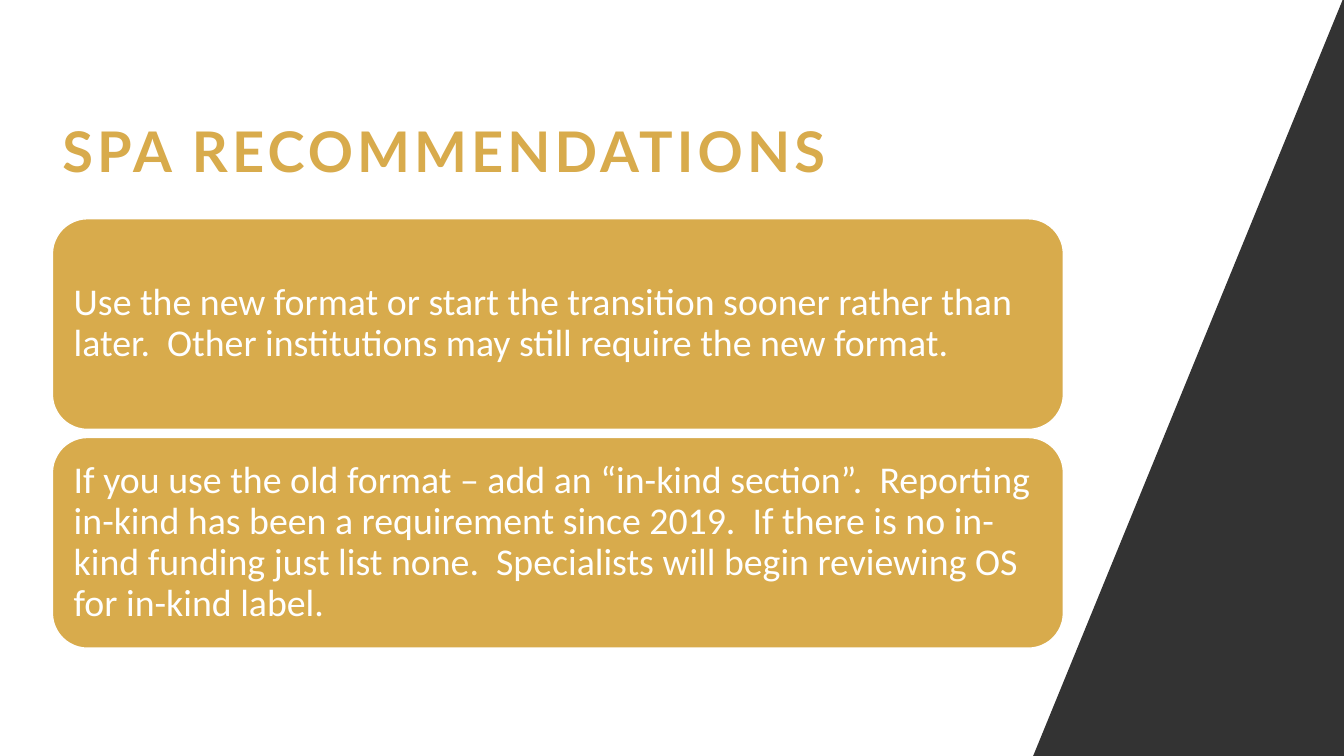
import dataclasses

import pptx
import pptx.dml.color
import pptx.enum.shapes
import pptx.enum.text
import pptx.shapes.autoshape
import pptx.slide
import pptx.util

Inches = pptx.util.Inches
Pt = pptx.util.Pt
Anchor = pptx.enum.text.MSO_ANCHOR

GOLD = "D8AB4C"
WHITE = "FFFFFF"
CHARCOAL = "333333"

SLIDE_HEIGHT = 7.5
SLIDE_WIDTH = SLIDE_HEIGHT * 16 / 9
LEFT, CONTENT_WIDTH = 0.52, 10.03
CARD_TOP, CARD_HEIGHT, CARD_GAP = 2.17, 2.09, 0.08


@dataclasses.dataclass
class Card:
    text: str
    top: float


RECOMMENDATIONS = [
    "Use the new format or start the transition sooner rather than later.  "
    "Other institutions may still require the new format.",
    "If you use the old format – add an “in-kind section”.  Reporting in-kind "
    "has been a requirement since 2019.  If there is no in-kind funding just "
    "list none.  Specialists will begin reviewing OS for in-kind label.",
]


def color(value: str) -> pptx.dml.color.RGBColor:
    return pptx.dml.color.RGBColor.from_string(value)


def write_text(
    shape: pptx.shapes.autoshape.Shape,
    text: str,
    *,
    font: str,
    size: float,
    fill: str,
    anchor: Anchor,
    bold: bool = False,
    margin_x: float = 0.1,
    margin_y: float = 0.05,
    tracking: float = 0,
) -> None:
    """Fill the shape with one left-aligned paragraph; tracking is in points."""
    frame = shape.text_frame
    frame.word_wrap = True
    frame.vertical_anchor = anchor
    frame.margin_left = frame.margin_right = Inches(margin_x)
    frame.margin_top = frame.margin_bottom = Inches(margin_y)
    paragraph = frame.paragraphs[0]
    paragraph.alignment = pptx.enum.text.PP_ALIGN.LEFT
    paragraph.line_spacing = 0.9
    run = paragraph.add_run()
    run.text = text
    run.font.name = font
    run.font.size = Pt(size)
    run.font.bold = bold
    run.font.color.rgb = color(fill)
    if tracking:
        run._r.get_or_add_rPr().set("spc", str(round(tracking * 100)))


def draw_wedge(slide: pptx.slide.Slide) -> None:
    builder = slide.shapes.build_freeform(Inches(13.32), 0)
    corners = [(SLIDE_WIDTH, 0), (SLIDE_WIDTH, SLIDE_HEIGHT), (10.25, SLIDE_HEIGHT)]
    builder.add_line_segments([(Inches(x), Inches(y)) for x, y in corners], close=True)
    wedge = builder.convert_to_shape()
    wedge.shadow.inherit = False
    wedge.fill.solid()
    wedge.fill.fore_color.rgb = color(CHARCOAL)
    wedge.line.fill.background()


def draw_title(slide: pptx.slide.Slide) -> None:
    title = slide.shapes.add_textbox(
        Inches(LEFT), Inches(0.43), Inches(CONTENT_WIDTH), Inches(1.45)
    )
    write_text(title, "SPA RECOMMENDATIONS", font="Lato", size=40, fill=GOLD,
               anchor=Anchor.BOTTOM, bold=True, tracking=3)


def draw_card(slide: pptx.slide.Slide, card: Card) -> None:
    shape = slide.shapes.add_shape(
        pptx.enum.shapes.MSO_SHAPE.ROUNDED_RECTANGLE,
        Inches(LEFT), Inches(card.top), Inches(CONTENT_WIDTH), Inches(CARD_HEIGHT),
    )
    shape.shadow.inherit = False
    shape.fill.solid()
    shape.fill.fore_color.rgb = color(GOLD)
    shape.line.color.rgb = color(WHITE)
    shape.line.width = Pt(1)
    write_text(shape, card.text, font="Calibri", size=27, fill=WHITE,
               anchor=Anchor.MIDDLE, margin_x=0.11, margin_y=0.11)


def main() -> None:
    presentation = pptx.Presentation()
    presentation.slide_width = Inches(SLIDE_WIDTH)
    presentation.slide_height = Inches(SLIDE_HEIGHT)
    slide = presentation.slides.add_slide(presentation.slide_layouts[6])

    draw_wedge(slide)
    draw_title(slide)
    for index, text in enumerate(RECOMMENDATIONS):
        draw_card(slide, Card(text, CARD_TOP + index * (CARD_HEIGHT + CARD_GAP)))

    presentation.save("out.pptx")


if __name__ == "__main__":
    main()
